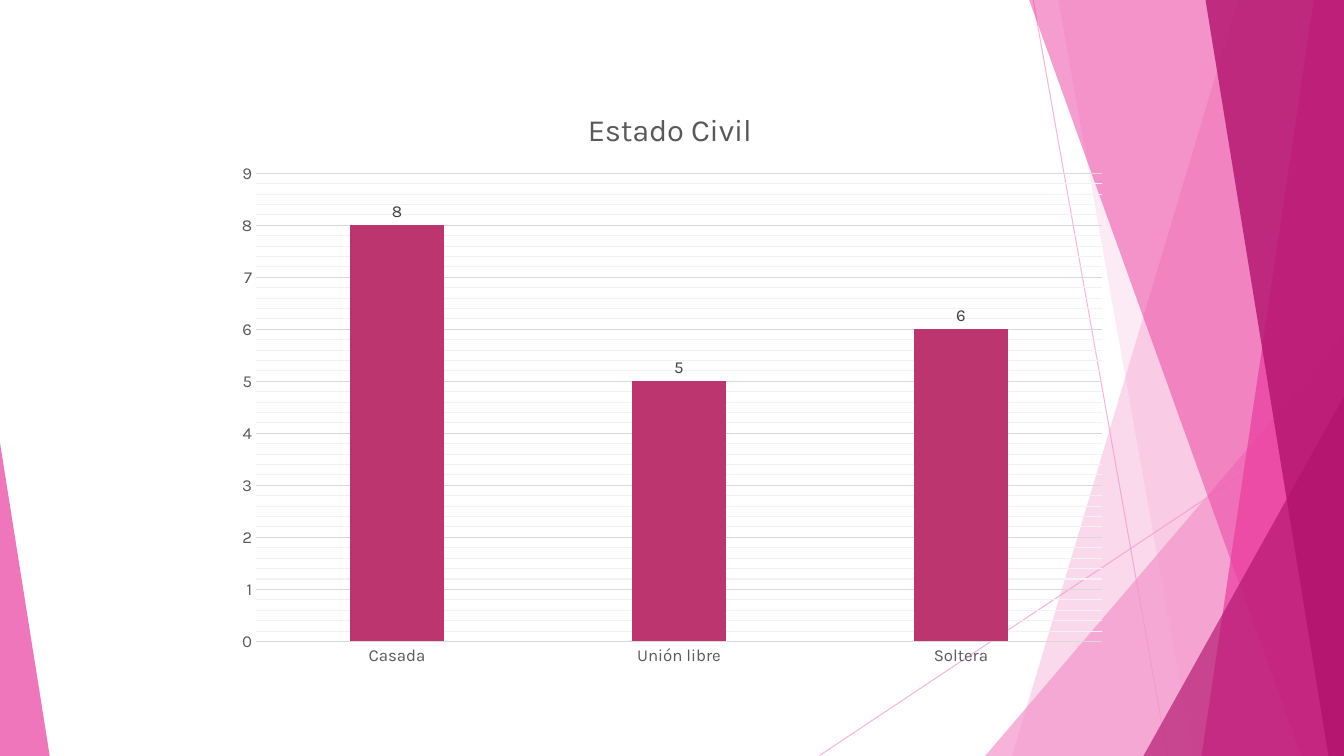
from dataclasses import dataclass

from lxml.etree import SubElement
from pptx import Presentation
from pptx.chart.data import CategoryChartData
from pptx.dml.color import RGBColor
from pptx.enum.chart import XL_CHART_TYPE, XL_LABEL_POSITION, XL_TICK_MARK
from pptx.enum.shapes import MSO_CONNECTOR, MSO_SHAPE
from pptx.oxml import parse_xml
from pptx.oxml.ns import nsdecls, qn
from pptx.util import Emu, Pt

# The slide is a grid of square cells
COLS, ROWS = 40, 22.5
CELL = 304800
FONT = "Karla"
HUES = {
    "pale": "F496CB", "pink": "EB3D9F", "deep": "B2136D", "bar": "BC356F",
    "grid": "D9D9D9", "faint": "F2F2F2", "text": "595959", "label": "404040",
}


@dataclass
class Ray:
    start: tuple[float, float]
    end: tuple[float, float]


@dataclass
class Wedge:
    """Band from its slanted left edge to the right edge of the slide."""
    top: float
    foot: float
    hue: str
    alpha: int


@dataclass
class Peak:
    """Triangle standing on the foot of the slide."""
    left: float
    top: float
    width: float
    tip: float
    hue: str
    alpha: int


RAYS = [Ray((30.75, 0), (34.75, ROWS)), Ray((COLS, 12.1), (24.37, ROWS))]
FACETS = [
    Wedge(36.85, 30.12, "pale", 36),
    Wedge(31.5, 35.5, "pale", 20),
    Peak(29.32, 10, 10.68, 1, "pale", 72),
    Wedge(30.63, 38.73, "pink", 50),
    Wedge(39.1, 35.76, "pink", 70),
    Wedge(35.88, 39.54, "deep", 80),
    Peak(34.03, 11.8, 5.97, 1, "deep", 66),
    Peak(0, 13.18, 1.48, 0, "pink", 70),
]


def cells(count: float) -> Emu:
    return Emu(round(count * CELL))


def tint(hue: str) -> RGBColor:
    return RGBColor.from_string(HUES[hue])


def fade(part, alpha: int) -> None:
    for color in part.iter(qn("a:srgbClr")):
        SubElement(color, qn("a:alpha"), val=str(alpha * 1000))


def style(font, size: float, hue: str) -> None:
    font.name, font.size, font.bold = FONT, Pt(size), False
    font.color.rgb = tint(hue)


def write(frame, text: str, *, size: float, hue: str) -> None:
    frame.text = text
    style(frame.paragraphs[0].runs[0].font, size, hue)


def stroke(line, hue: str) -> None:
    line.color.rgb = tint(hue)
    line.width = Pt(0.75)


def draw_ray(shapes, ray: Ray) -> None:
    line = shapes.add_connector(
        MSO_CONNECTOR.STRAIGHT, *map(cells, ray.start + ray.end))
    stroke(line.line, "pale")
    props = line._element.spPr
    fade(props, 70)
    SubElement(props, qn("a:effectLst"))


def draw_facet(shapes, facet: Wedge | Peak) -> None:
    if isinstance(facet, Wedge):
        form = shapes.build_freeform(cells(facet.top), 0)
        corners = [(COLS, 0), (COLS, ROWS), (facet.foot, ROWS)]
        form.add_line_segments([(cells(x), cells(y)) for x, y in corners])
        shape = form.convert_to_shape()
    else:
        box = (facet.left, facet.top, facet.width, ROWS - facet.top)
        shape = shapes.add_shape(
            MSO_SHAPE.ISOSCELES_TRIANGLE, *map(cells, box))
        shape.adjustments[0] = facet.tip
    shape.shadow.inherit = False
    shape.fill.solid()
    shape.fill.fore_color.rgb = tint(facet.hue)
    fade(shape._element.spPr, facet.alpha)
    shape.line.fill.background()


def layout(target: str, **shares: float):
    """Manual chart layout, in shares of the chart's size."""
    inner = '<c:layoutTarget val="inner"/>' if target == "inner" else ""
    modes = "".join(f'<c:{key}Mode val="edge"/>' for key in "xy")
    sizes = "".join(f'<c:{key} val="{val}"/>' for key, val in shares.items())
    return parse_xml(
        f'<c:layout {nsdecls("c")}><c:manualLayout>{inner}{modes}{sizes}'
        '</c:manualLayout></c:layout>')


def clear(part) -> None:
    for old in part.findall(qn("c:layout")):
        part.remove(old)


def draw_chart(shapes) -> None:
    data = CategoryChartData()
    data.categories = ["Casada", "Unión libre", "Soltera"]
    data.add_series("Series 1", [8, 5, 6])
    box = map(cells, (6.66, 2.38, 26.67, 17.8))
    chart = shapes.add_chart(XL_CHART_TYPE.COLUMN_CLUSTERED, *box, data).chart
    style(chart.font, 10, "text")
    chart.has_legend = False

    # Title and plot area
    chart.has_title = True
    title = chart.chart_title
    write(title.text_frame, "Estado Civil", size=22, hue="text")
    head = title._element
    clear(head)
    head.find(qn("c:tx")).addnext(layout("title", x=0.4, y=0.04))
    area = chart._chartSpace.chart.plotArea
    clear(area)
    area.insert(0, layout("inner", x=0.036, y=0.156, w=0.944, h=0.783))

    # Axes and grid lines
    base, scale = chart.category_axis, chart.value_axis
    for axis in (base, scale):
        axis.major_tick_mark = axis.minor_tick_mark = XL_TICK_MARK.NONE
        style(axis.tick_labels.font, 12, "text")
    stroke(base.format.line, "grid")
    scale.format.line.fill.background()
    scale.minimum_scale, scale.maximum_scale = 0, 9
    scale.major_unit, scale.minor_unit = 1, 0.2
    scale.has_major_gridlines = scale.has_minor_gridlines = True
    stroke(scale.major_gridlines.format.line, "grid")
    minor = scale._element.find(qn("c:minorGridlines"))
    minor.append(parse_xml(
        f'<c:spPr {nsdecls("c", "a")}><a:ln w="{Pt(0.75)}"><a:solidFill>'
        f'<a:srgbClr val="{HUES["faint"]}"/></a:solidFill></a:ln></c:spPr>'))

    # Bars and labels
    plot = chart.plots[0]
    plot.gap_width = 199
    plot.vary_by_categories = False
    bars = plot.series[0]
    bars.format.fill.solid()
    bars.format.fill.fore_color.rgb = tint("bar")
    labels = bars.data_labels
    labels.show_value = True
    labels.position = XL_LABEL_POSITION.OUTSIDE_END
    style(labels.font, 12, "label")


def main() -> None:
    deck = Presentation()
    deck.slide_width, deck.slide_height = cells(COLS), cells(ROWS)
    shapes = deck.slides.add_slide(deck.slide_layouts[6]).shapes
    for ray in RAYS:
        draw_ray(shapes, ray)
    for facet in FACETS:
        draw_facet(shapes, facet)
    draw_chart(shapes)
    deck.save("out.pptx")


if __name__ == "__main__":
    main()
